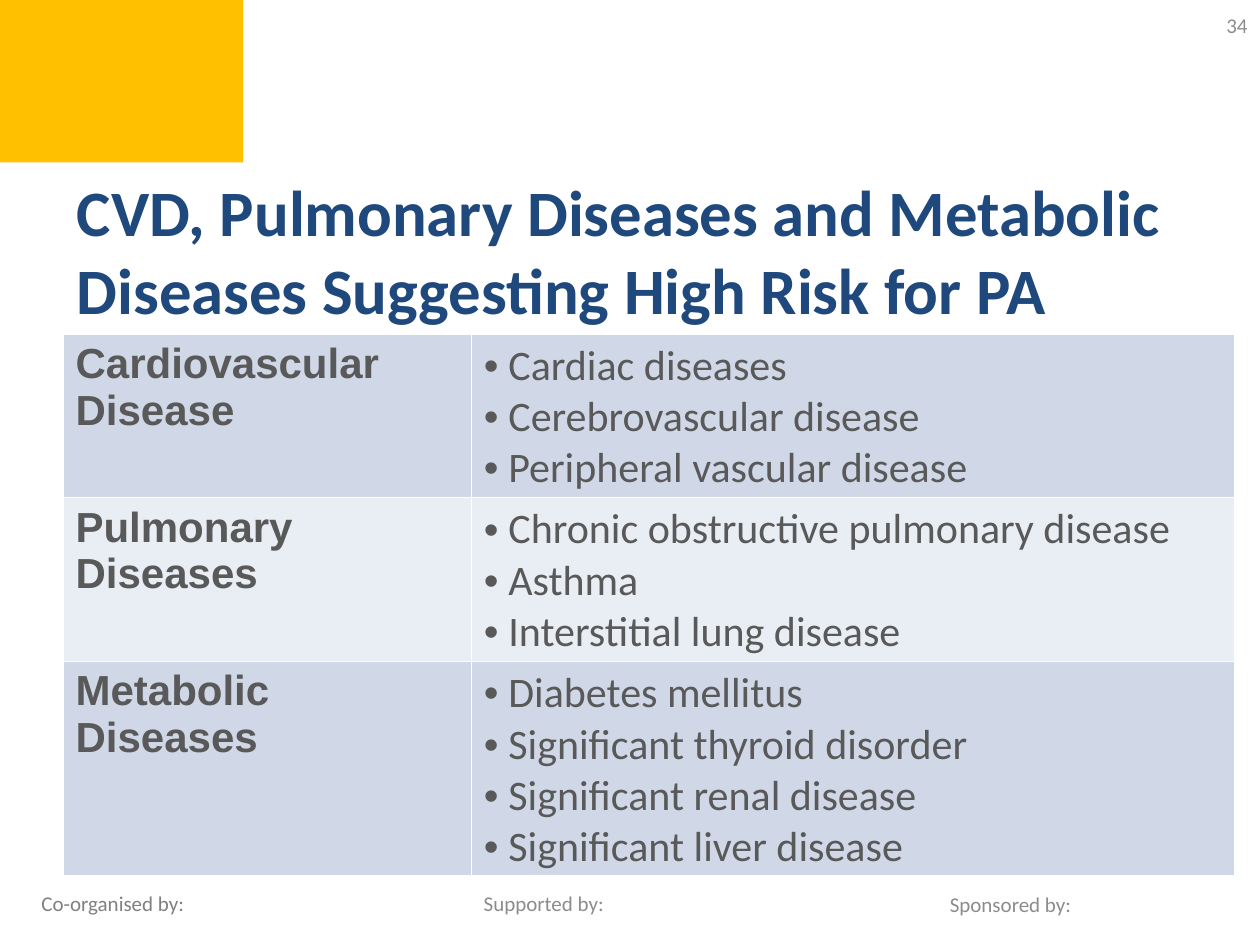
import pptx
import pptx.dml.color
import pptx.enum.shapes
import pptx.enum.text
import pptx.oxml
import pptx.oxml.ns
import pptx.util

Pt = pptx.util.Pt
Align = pptx.enum.text.PP_ALIGN
Anchor = pptx.enum.text.MSO_ANCHOR
TITLE_ONLY = 5

DISEASES = [
    ("Cardiovascular Disease", "D0D8E8", 93.6, [
        "Cardiac diseases",
        "Cerebrovascular disease",
        "Peripheral vascular disease",
    ]),
    ("Pulmonary Diseases", "E9EDF4", 93.6, [
        "Chronic obstructive pulmonary disease",
        "Asthma",
        "Interstitial lung disease",
    ]),
    ("Metabolic Diseases", "D0D8E8", 122.4, [
        "Diabetes mellitus",
        "Significant thyroid disorder",
        "Significant renal disease",
        "Significant liver disease",
    ]),
]


def color(value):
    return pptx.dml.color.RGBColor.from_string(value)


class SlideBuilder:
    title_format = {"name": "Calibri", "size": Pt(37), "bold": True, "color": "1F497D"}
    label_format = {"name": "Calibri", "size": Pt(12), "bold": False, "color": "8C8C8C"}
    heading_format = {"name": "Arial", "size": Pt(24), "bold": True, "color": "595959"}
    item_format = {**heading_format, "name": "Calibri", "bold": False}
    bullet_indent = Pt(14)
    border_width = Pt(1)
    border_color = "FFFFFF"

    def __init__(self, deck):
        self.slide = deck.slides.add_slide(deck.slide_layouts[TITLE_ONLY])

    def add_text(self, para, text, text_format):
        span = para.add_run()
        span.text = text
        for name, value in text_format.items():
            if name == "color":
                span.font.color.rgb = color(value)
            else:
                setattr(span.font, name, value)

    def title(self, text, left, top, width, height):
        box = self.slide.shapes.title
        place = {"left": left, "top": top, "width": width, "height": height}
        for name, value in place.items():
            setattr(box, name, Pt(value))
        frame = box.text_frame
        frame.auto_size = pptx.enum.text.MSO_AUTO_SIZE.NONE
        frame.vertical_anchor = Anchor.MIDDLE
        para = frame.paragraphs[0]
        para.alignment = Align.LEFT
        self.add_text(para, text, self.title_format)

    def block(self, fill, left, top, width, height):
        shape = self.slide.shapes.add_shape(
            pptx.enum.shapes.MSO_SHAPE.RECTANGLE, Pt(left), Pt(top), Pt(width), Pt(height))
        shape.shadow.inherit = False
        shape.fill.solid()
        shape.fill.fore_color.rgb = color(fill)
        shape.line.fill.background()

    def label(self, text, left, top, width, height, align=Align.LEFT, **changes):
        box = self.slide.shapes.add_textbox(Pt(left), Pt(top), Pt(width), Pt(height))
        frame = box.text_frame
        frame.word_wrap = True
        frame.vertical_anchor = Anchor.MIDDLE
        para = frame.paragraphs[0]
        para.alignment = align
        self.add_text(para, text, {**self.label_format, **changes})

    def bullet(self, para):
        properties = para._p.get_or_add_pPr()
        properties.set("marL", str(self.bullet_indent))
        properties.set("indent", str(-self.bullet_indent))
        namespace = pptx.oxml.ns.nsdecls("a")
        for markup in ('<a:buFont {} typeface="Arial"/>', '<a:buChar {} char="•"/>'):
            properties.append(pptx.oxml.parse_xml(markup.format(namespace)))

    def style_cell(self, cell, fill):
        cell.fill.solid()
        cell.fill.fore_color.rgb = color(fill)
        properties = cell._tc.get_or_add_tcPr()
        for index, side in enumerate(("lnL", "lnR", "lnT", "lnB")):
            properties.insert(index, pptx.oxml.parse_xml(
                f'<a:{side} {pptx.oxml.ns.nsdecls("a")} w="{self.border_width}">'
                f'<a:solidFill><a:srgbClr val="{self.border_color}"/></a:solidFill>'
                f'</a:{side}>'))

    def disease_table(self, groups, left, top, widths):
        height = sum(group[2] for group in groups)
        table = self.slide.shapes.add_table(
            len(groups), len(widths), Pt(left), Pt(top), Pt(sum(widths)), Pt(height)).table
        table.first_row = False
        table.horz_banding = False
        for column, width in zip(table.columns, widths):
            column.width = Pt(width)
        for row, (heading, fill, row_height, items) in zip(table.rows, groups):
            row.height = Pt(row_height)
            heading_cell, item_cell = row.cells
            self.style_cell(heading_cell, fill)
            self.style_cell(item_cell, fill)
            self.add_text(heading_cell.text_frame.paragraphs[0], heading, self.heading_format)
            frame = item_cell.text_frame
            for index, item in enumerate(items):
                para = frame.add_paragraph() if index else frame.paragraphs[0]
                self.bullet(para)
                self.add_text(para, item, self.item_format)


def main():
    deck = pptx.Presentation()
    deck.slide_width, deck.slide_height = Pt(720), Pt(540)
    page = SlideBuilder(deck)
    page.block("FFC000", 0, -1.5, 139, 94.3)
    page.label("Co-organised by:", 16.6, 501.8, 228, 28.8, color="808080")
    page.label("Supported by:", 269.3, 501.8, 228, 28.8)
    page.label("Sponsored by:", 535.7, 502.2, 164, 28.8)
    page.title("CVD, Pulmonary Diseases and Metabolic Diseases Suggesting High Risk for PA",
               36.7, 106, 648, 73.4)
    page.disease_table(DISEASES, 36, 190.8, [233.3, 436.3])
    page.label("34", 552, 0, 168, 28.8, Align.RIGHT)
    deck.save("out.pptx")


if __name__ == "__main__":
    main()
